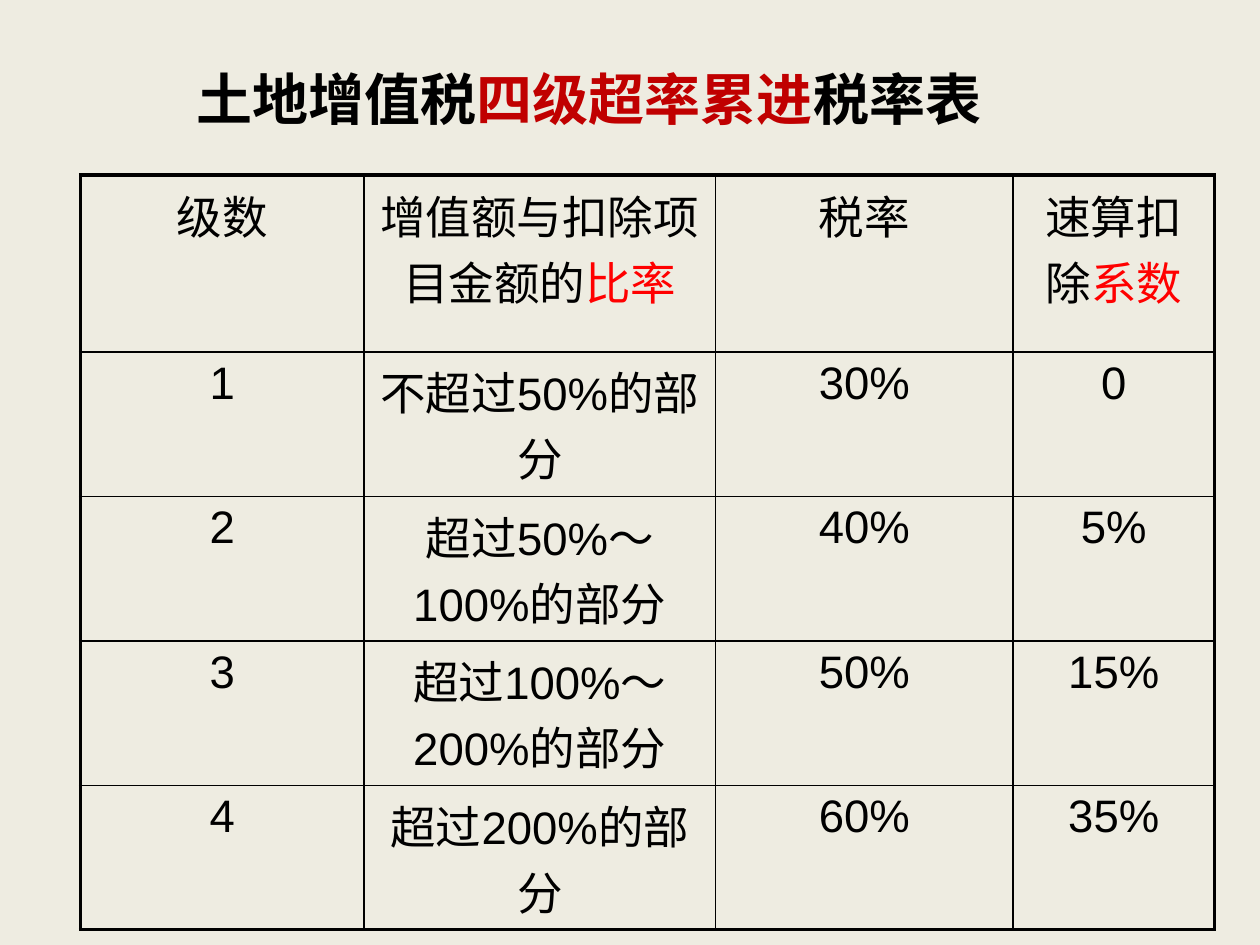
from lxml.etree import SubElement
from pptx import Presentation
from pptx.dml.color import RGBColor
from pptx.enum.text import MSO_ANCHOR as Anchor, MSO_AUTO_SIZE as AutoSize, PP_ALIGN as Align
from pptx.oxml.ns import qn
from pptx.util import Pt

BACKGROUND = RGBColor(0xEE, 0xEC, 0xE1)
BLACK = RGBColor(0, 0, 0)
DARK_RED = RGBColor(0xC0, 0, 0)
RED = RGBColor(0xFF, 0, 0)

TITLE = [("土地增值税", BLACK), ("四级超率累进", DARK_RED), ("税率表", BLACK)]
HEADER = [
    [("级数", BLACK)],
    [("增值额与扣除项目金额的", BLACK), ("比率", RED)],
    [("税率", BLACK)],
    [("速算扣除", BLACK), ("系数", RED)],
]
BRACKETS = [
    ("1", "不超过50%的部分", "30%", "0"),
    ("2", "超过50%～100%的部分", "40%", "5%"),
    ("3", "超过100%～200%的部分", "50%", "15%"),
    ("4", "超过200%的部分", "60%", "35%"),
]
COL_WIDTHS = [162, 201, 170, 115]
ROW_HEIGHTS = [101, 71, 71, 71, 70]
OUTER, INNER = 2.25, 1


def add_runs(p, parts, font, size, bold=False):
    """Append coloured runs to a paragraph."""
    for text, color in parts:
        r = p.add_run()
        r.text = text
        r.font.name = font
        r.font.size = Pt(size)
        r.font.bold = bold
        r.font.color.rgb = color


def add_title(s):
    """Place and fill the slide title."""
    sp = s.shapes.title
    sp.left, sp.top, sp.width, sp.height = Pt(105), Pt(33), Pt(623.5), Pt(46)
    tf = sp.text_frame
    tf.auto_size = AutoSize.NONE
    tf.vertical_anchor = Anchor.TOP
    p = tf.paragraphs[0]
    p.alignment = Align.LEFT
    add_runs(p, TITLE, "Calibri", 32, bold=True)


def set_borders(cell, widths):
    """Draw black borders in left, right, top, bottom order."""
    tc_pr = cell._tc.get_or_add_tcPr()
    for side, width in zip("LRTB", widths):
        ln = SubElement(tc_pr, qn(f"a:ln{side}"), w=str(Pt(width)))
        fill = SubElement(ln, qn("a:solidFill"))
        SubElement(fill, qn("a:srgbClr"), val=str(BLACK))


def add_rate_table(s):
    """Add the tax rate table with a heavy outer frame."""
    rows = [HEADER] + [[[(text, BLACK)] for text in row] for row in BRACKETS]
    last_row, last_col = len(rows) - 1, len(HEADER) - 1
    table = s.shapes.add_table(
        len(rows), len(HEADER), Pt(46), Pt(100),
        Pt(sum(COL_WIDTHS)), Pt(sum(ROW_HEIGHTS))).table
    table.first_row = table.horz_banding = False
    for col, width in zip(table.columns, COL_WIDTHS):
        col.width = Pt(width)
    for i, (row, height) in enumerate(zip(rows, ROW_HEIGHTS)):
        table.rows[i].height = Pt(height)
        for j, parts in enumerate(row):
            cell = table.cell(i, j)
            edges = (j == 0, j == last_col, i == 0, i == last_row)
            set_borders(cell, [OUTER if edge else INNER for edge in edges])
            cell.fill.background()
            p = cell.text_frame.paragraphs[0]
            p.alignment = Align.CENTER
            add_runs(p, parts, "Arial", 26)


def main():
    """Build and save the slide."""
    prs = Presentation()
    prs.slide_width, prs.slide_height = Pt(720), Pt(540)
    s = prs.slides.add_slide(prs.slide_layouts[5])
    s.background.fill.solid()
    s.background.fill.fore_color.rgb = BACKGROUND
    add_rate_table(s)
    add_title(s)
    prs.save("out.pptx")


if __name__ == "__main__":
    main()
